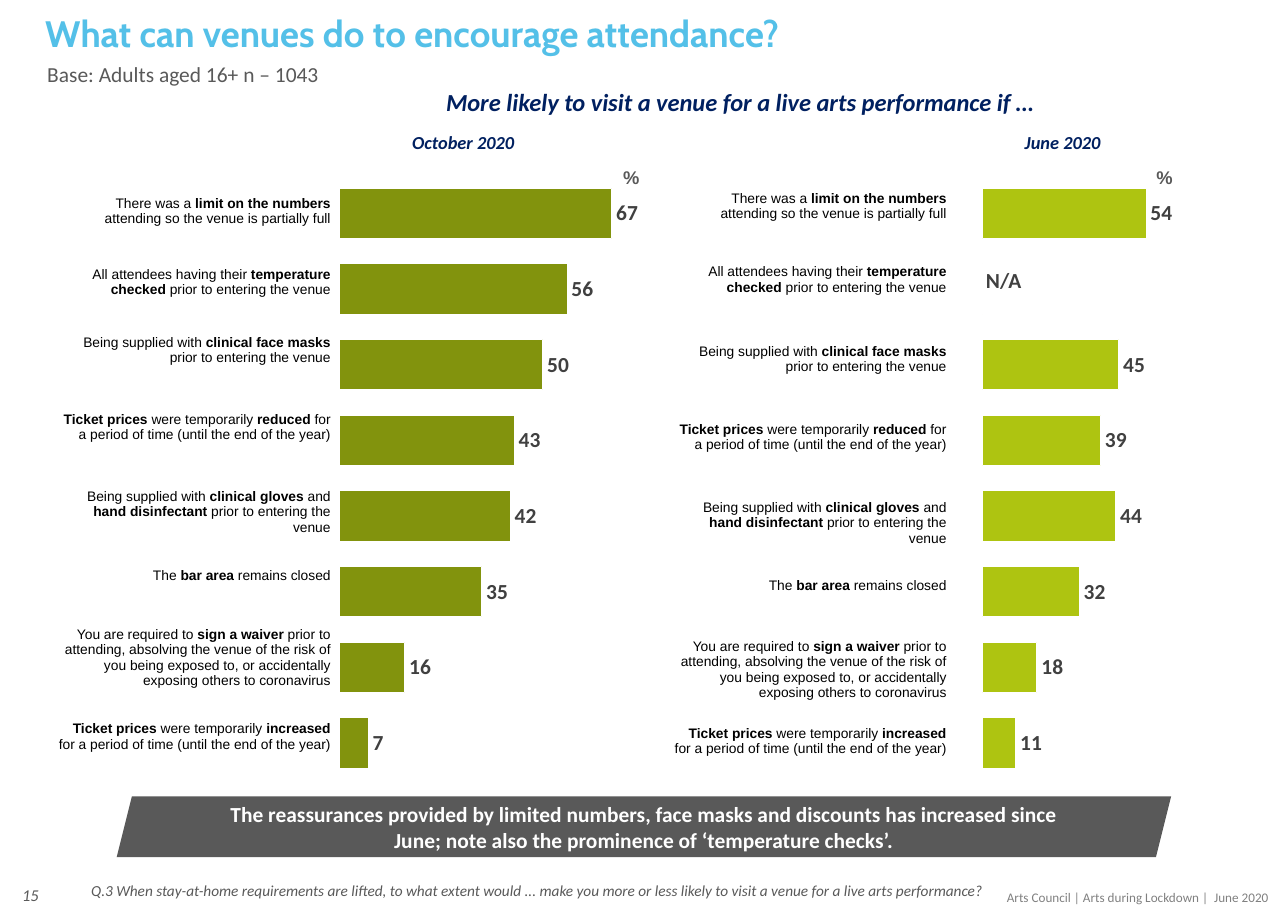
from lxml.etree import SubElement
from pptx import Presentation
from pptx.chart.data import CategoryChartData
from pptx.dml.color import RGBColor
from pptx.enum.chart import XL_CHART_TYPE, XL_LABEL_POSITION
from pptx.enum.shapes import MSO_SHAPE
from pptx.enum.text import MSO_ANCHOR, MSO_AUTO_SIZE, PP_ALIGN
from pptx.oxml.ns import qn
from pptx.util import Inches, Pt

# Content; ** marks bold words
TITLE = "What can venues do to encourage attendance?"
BASE = "Base: Adults aged 16+ n – 1043"
HEAD = "More likely to visit a venue for a live arts performance if …"
NOTE = ("The reassurances provided by limited numbers, face masks and discounts has "
        "increased since June; note also the prominence of ‘temperature checks’.")
QUERY = ("Q.3 When stay-at-home requirements are lifted, to what extent would ... make "
         "you more or less likely to visit a venue for a live arts performance?")
FOOT = "Arts Council | Arts during Lockdown |  June 2020"
REASONS = [
    "There was a **limit on the numbers **attending so the venue is partially full",
    "All attendees having their **temperature checked **prior to entering the venue",
    "Being supplied with **clinical face masks **prior to entering the venue",
    "**Ticket prices **were temporarily **reduced** for a period of time "
    "(until the end of the year)",
    "Being supplied with **clinical gloves **and **hand disinfectant** prior to "
    "entering the venue",
    "The **bar area **remains closed",
    "You are required to **sign a waiver **prior to attending, absolving the venue of "
    "the risk of you being exposed to, or accidentally exposing others to coronavirus",
    "**Ticket prices **were temporarily **increased** for a period of time "
    "(until the end of the year)",
]
WAVES = [
    dict(name="October 2020", vals=[67, 56, 50, 43, 42, 35, 16, 7], cats=8,
         color="olive", chart=(1.22, 4.87), plot=(0.383, 0.605), name_x=3.27,
         unit_x=5.41, table=(0.49, 1.77),
         rows=[0.64, 0.62, 0.7, 0.7, 0.72, 0.53, 0.86, 0.79]),
    dict(name="June 2020", vals=[54, 0, 45, 39, 44, 32, 18, 11], cats=7,
         color="lime", chart=(7.34, 3.78), plot=(0.417, 0.583), name_x=8.71,
         unit_x=10.25, table=(6.08, 1.72),
         rows=[0.67, 0.72, 0.71, 0.71, 0.71, 0.55, 0.79, 0.83]),
]
COLORS = {"sky": "54C0E8", "navy": "002060", "gray": "595959", "dark": "404040",
          "pale": "808080", "olive": "82930D", "lime": "AEC411",
          "black": "000000", "white": "FFFFFF"}
ALIGN = {"l": PP_ALIGN.LEFT, "c": PP_ALIGN.CENTER, "r": PP_ALIGN.RIGHT}
NO_STYLE = "{2D5ABB26-0587-4C30-8999-92F81FD0307C}"


def rgb(name):
    return RGBColor.from_string(COLORS[name])


def style(font, size, color, face="Calibri", bold=False, italic=False):
    font.size, font.name = Pt(size), face
    font.bold, font.italic = bold, italic
    font.color.rgb = rgb(color)


def write(frame, text, size=12, color="gray", face="Calibri", bold=False,
          italic=False, align="l", space=1.0):
    """Fill a text frame, switching bold at each ** mark."""
    para = frame.paragraphs[0]
    para.alignment, para.line_spacing = ALIGN[align], space
    for i, part in enumerate(text.split("**")):
        if part:
            run = para.add_run()
            run.text = part
            style(run.font, size, color, face, bold or i % 2 == 1, italic)
    if not text:
        # Keeps an empty cell from stretching its row
        SubElement(para._p, qn("a:endParaRPr")).set("sz", str(size * 100))


def label(box, text, wrap=True, anchor=MSO_ANCHOR.TOP, **fmt):
    frame = slide.shapes.add_textbox(*map(Inches, box)).text_frame
    frame.word_wrap, frame.vertical_anchor = wrap, anchor
    write(frame, text, **fmt)


def grid(left, top, cols, rows, texts, inset=0.0, anchor=MSO_ANCHOR.TOP, **fmt):
    """Plain table without borders; texts run row by row."""
    shape = slide.shapes.add_table(len(rows), len(cols), *map(
        Inches, (left, top, sum(cols), sum(rows))))
    shape.element.find(".//" + qn("a:tableStyleId")).text = NO_STYLE
    table = shape.table
    table.first_row = table.horz_banding = False
    for col, wide in zip(table.columns, cols):
        col.width = Inches(wide)
    for row, high in zip(table.rows, rows):
        row.height = Inches(high)
    for cell, text in zip(table.iter_cells(), texts):
        cell.fill.background()
        cell.margin_left = cell.margin_right = cell.margin_top = Inches(inset)
        cell.margin_bottom = 0
        cell.vertical_anchor = anchor
        write(cell.text_frame, text, **fmt)


def bars(wave):
    data = CategoryChartData(number_format="0")
    data.categories = [str(i + 1) for i in range(wave["cats"])]
    data.add_series("Series 1", wave["vals"])
    left, width = wave["chart"]
    chart = slide.shapes.add_chart(XL_CHART_TYPE.BAR_CLUSTERED, *map(
        Inches, (left, 1.29, width, 5.84)), data).chart
    chart.has_legend = chart.has_title = False
    style(chart.font, 10, "black")

    # Hidden axes on one shared scale
    cat, val = chart.category_axis, chart.value_axis
    cat.reverse_order = True
    val.minimum_scale, val.maximum_scale = 0, 80
    val.has_major_gridlines = False
    cat.visible = val.visible = False

    # Bars and value labels; a zero shows no label
    plot = chart.plots[0]
    plot.gap_width, plot.vary_by_categories = 50, False
    series = plot.series[0]
    series.invert_if_negative = False
    series.format.fill.solid()
    series.format.fill.fore_color.rgb = rgb(wave["color"])
    series.format.line.color.rgb = rgb("white")
    series.format.line.width = Pt(0.75)
    tags = series.data_labels
    tags.show_value, tags.position = True, XL_LABEL_POSITION.OUTSIDE_END
    tags.number_format, tags.number_format_is_linked = "0;;;", False
    style(tags.font, 14, "dark", bold=True)

    # Fixed inner plot area
    area = chart.element.find(".//" + qn("c:plotArea"))
    layout = area.find(qn("c:layout"))
    if layout is None:
        layout = SubElement(area, qn("c:layout"))
        area.insert(0, layout)
    manual = SubElement(layout, qn("c:manualLayout"))
    x, wide = wave["plot"]
    for key, value in [("layoutTarget", "inner"), ("xMode", "edge"), ("yMode", "edge"),
                       ("x", x), ("y", 0.052), ("w", wide), ("h", 0.941)]:
        SubElement(manual, qn("c:" + key)).set("val", str(value))


deck = Presentation()
deck.slide_width, deck.slide_height = Inches(11.69), Inches(8.27)
slide = deck.slides.add_slide(deck.slide_layouts[5])

# Title and headings
title = slide.shapes.title
title.left, title.top, title.width, title.height = map(Inches, (0.31, 0.09, 9.38, 0.45))
title.text_frame.auto_size = MSO_AUTO_SIZE.NONE
title.text_frame.vertical_anchor = MSO_ANCHOR.TOP
write(title.text_frame, TITLE, size=24, color="sky", face="Cabin", bold=True, space=0.9)
label((0.33, 0.53, 6.55, 0.39), BASE, size=14, space=0.9)
label((3.95, 0.74, 5.61, 0.37), HEAD, wrap=False, size=16, color="navy",
      bold=True, italic=True)

# One chart with its reasons per survey wave
for wave in WAVES:
    bars(wave)
    label((wave["name_x"], 1.14, 1.87, 0.3), wave["name"], color="navy",
          bold=True, italic=True, align="c")
    grid(wave["unit_x"], 1.52, [0.03, 0.56], [0.2], ["", "%"],
         anchor=MSO_ANCHOR.MIDDLE, face="Arial", bold=True, align="c")
    grid(*wave["table"], [2.52], wave["rows"], REASONS, inset=0.01,
         size=9, color="black", face="Arial", align="r")
label((8.85, 2.4, 0.59, 0.39), "N/A", size=14, color="dark", bold=True, space=0.9)

# Takeaway banner
banner = slide.shapes.add_shape(MSO_SHAPE.PARALLELOGRAM, *map(
    Inches, (1.06, 7.23, 9.57, 0.55)))
banner.shadow.inherit = False
banner.fill.solid()
banner.fill.fore_color.rgb = rgb("gray")
banner.line.fill.background()
frame = banner.text_frame
frame.word_wrap, frame.vertical_anchor = True, MSO_ANCHOR.MIDDLE
frame.margin_left = frame.margin_right = frame.margin_top = frame.margin_bottom = 0
write(frame, NOTE, size=14, color="white", bold=True, align="c")

# Footer
label((0.73, 7.97, 8.5, 0.3), QUERY, size=10, italic=True, space=0.9)
label((7.71, 8.02, 3.91, 0.25), FOOT, size=8.6, color="pale", align="r")
label((0, 7.9, 0.45, 0.44), "15", anchor=MSO_ANCHOR.MIDDLE, size=10.8,
      italic=True, align="r")

deck.save("out.pptx")
